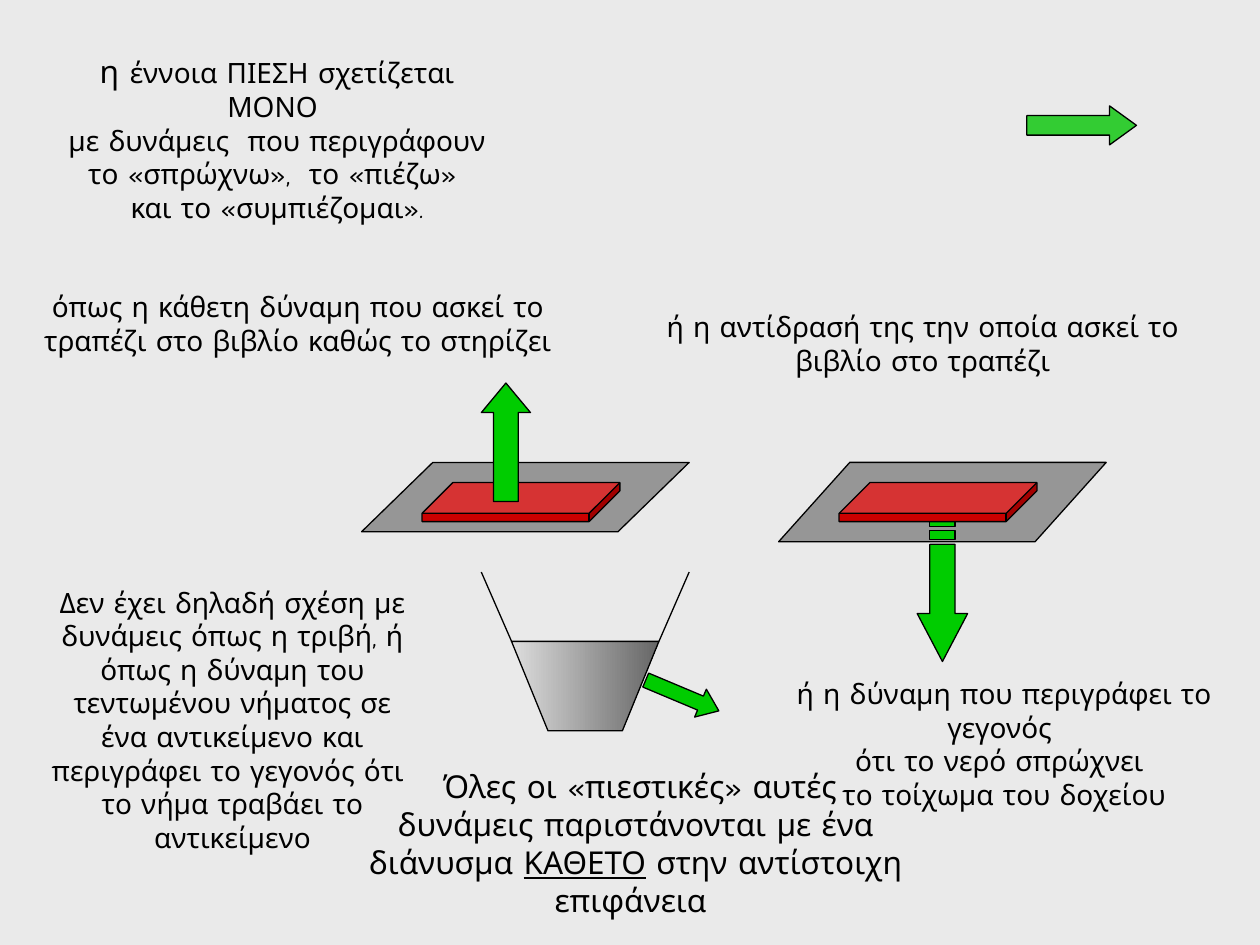
from lxml.etree import SubElement
from pptx import Presentation
from pptx.dml.color import RGBColor
from pptx.enum.shapes import MSO_CONNECTOR, MSO_SHAPE
from pptx.enum.text import MSO_ANCHOR, PP_ALIGN
from pptx.oxml.ns import qn
from pptx.util import Pt

PX = 9144
COLORS = {
    "background": "EAEAEA", "ink": "000000", "table": "969696", "book": "CC0000",
    "force": "00CC00", "lead": "33CC33", "water_light": "DDDDDD", "water_dark": "666666",
}
BODY = {"name": "Comic Neue", "size": Pt(16)}
LARGE = {"name": "Comic Neue", "size": Pt(18)}
ARIAL = {"name": "Arial", "size": Pt(18)}
UNDERLINED = {**LARGE, "underline": True}


def rgb(name):
    return RGBColor.from_string(COLORS[name])


def px(*values):
    return [v * PX for v in values]


def outline(sp):
    sp.line.color.rgb = rgb("ink")
    sp.line.width = Pt(0.75)


def paint(sp, color):
    sp.shadow.inherit = False
    sp.fill.solid()
    sp.fill.fore_color.rgb = rgb(color)
    outline(sp)


def add_preset(slide, kind, box, color, adjustments, rotation=0):
    sp = slide.shapes.add_shape(kind, *px(*box))
    for i, value in enumerate(adjustments):
        sp.adjustments[i] = value
    sp.rotation = rotation
    paint(sp, color)


def add_outline(slide, origin, contours, color):
    x, y = origin
    moved = [[(x + dx, y + dy) for dx, dy in points] for points in contours]
    builder = slide.shapes.build_freeform(*moved[0][0], scale=PX)
    builder.add_line_segments(moved[0][1:], close=True)
    for points in moved[1:]:
        builder.move_to(*points[0])
        builder.add_line_segments(points[1:], close=True)
    sp = builder.convert_to_shape()
    paint(sp, color)
    return sp


def add_line(slide, x1, y1, x2, y2):
    line = slide.shapes.add_connector(MSO_CONNECTOR.STRAIGHT, *px(x1, y1, x2, y2))
    SubElement(line._element.spPr, qn("a:effectLst"))
    outline(line)


def add_text(slide, box, paragraphs, anchor=MSO_ANCHOR.TOP):
    tf = slide.shapes.add_textbox(*px(*box)).text_frame
    tf.word_wrap = True
    tf.vertical_anchor = anchor
    for i, runs in enumerate(paragraphs):
        p = tf.add_paragraph() if i else tf.paragraphs[0]
        p.alignment = PP_ALIGN.CENTER
        for text, style in runs:
            r = p.add_run()
            r.text = text
            for key, value in style.items():
                setattr(r.font, key, value)
            r.font.color.rgb = rgb("ink")


def add_table_top(slide, box):
    skew = 0.565 * 100 / box[3]
    add_preset(slide, MSO_SHAPE.PARALLELOGRAM, box, "table", [skew])


def add_book(slide, box):
    x, y = box[:2]
    add_preset(slide, MSO_SHAPE.CUBE, (x + 48, y + 16, 157, 31), "book", [0.789])


def draw_support(slide, box):
    x, y = box[:2]
    add_table_top(slide, box)
    add_book(slide, box)
    add_preset(slide, MSO_SHAPE.UP_ARROW, (x + 95, y - 63, 39, 94), "force", [0.5, 0.602])


def draw_reaction(slide, box):
    add_table_top(slide, box)
    arrow = [(150, 120), (140, 120), (140, 65), (120, 65), (120, 120), (110, 120), (130, 158)]
    dashes = [[(140, top), (120, top), (120, bottom), (140, bottom)]
              for top, bottom in ((54, 61), (47, 51))]
    add_outline(slide, box[:2], [arrow, *dashes], "force")
    add_book(slide, box)


def draw_vessel(slide, box):
    x, y, w, h = box
    level = 55
    water = [(24, level), (53, h), (112, h), (w - 24, level)]
    sp = add_outline(slide, (x, y), [water], "water_light")
    sp.fill.gradient()
    sp.fill.gradient_angle = 0
    for stop, position, color in zip(sp.fill.gradient_stops, (0, 1), ("water_light", "water_dark")):
        stop.position = position
        stop.color.rgb = rgb(color)
    add_line(slide, x + 24, y + level, x, y)
    add_line(slide, x + w - 24, y + level, x + w, y)
    add_preset(slide, MSO_SHAPE.RIGHT_ARROW, (x + 128, y + 86, 63, 24), "force", [0.5, 0.658], 22.8)


def draw_intro(slide, box):
    add_text(slide, box, [
        [("η ", LARGE), ("έννοια ΠΙΕΣΗ σχετίζεται ΜΟΝΟ ", BODY)],
        [("με δυνάμεις  που περιγράφουν ", BODY)],
        [("το «σπρώχνω»,  το «πιέζω» ", BODY)],
        [("και το «συμπιέζομαι».", BODY)],
    ], MSO_ANCHOR.MIDDLE)


def draw_exclusion(slide, box):
    add_text(slide, box, [
        [("Δεν έχει δηλαδή σχέση με δυνάμεις όπως η τριβή, ή όπως η δύναμη του τεντωμένου "
          "νήματος σε ένα αντικείμενο και περιγράφει το γεγονός ότι ", BODY)],
        [("το νήμα τραβάει το αντικείμενο", BODY)],
    ], MSO_ANCHOR.MIDDLE)


def draw_conclusion(slide, box):
    add_text(slide, box, [[
        (" ", ARIAL),
        ("Όλες οι «πιεστικές» αυτές δυνάμεις παριστάνονται με ένα διάνυσμα ", LARGE),
        ("ΚΑΘΕΤΟ", UNDERLINED),
        (" στην αντίστοιχη επιφάνεια ", LARGE),
    ]], MSO_ANCHOR.MIDDLE)


def draw_caption(slide, box, *lines):
    add_text(slide, box, [[(line, BODY)] for line in lines])


def main():
    prs = Presentation()
    prs.slide_width, prs.slide_height = px(1000, 750)
    slide = prs.slides.add_slide(prs.slide_layouts[6])
    slide.background.fill.solid()
    slide.background.fill.fore_color.rgb = rgb("background")

    draw_reaction(slide, (618, 367, 260, 63))
    draw_intro(slide, (43, 36, 354, 147))
    draw_exclusion(slide, (27, 459, 315, 224))
    draw_conclusion(slide, (280, 619, 449, 100))
    draw_caption(slide, (20, 225, 433, 64),
                 "όπως η κάθετη δύναμη που ασκεί το τραπέζι στο βιβλίο καθώς το στηρίζει")
    draw_support(slide, (287, 367, 260, 55))
    draw_caption(slide, (516, 241, 433, 64),
                 "ή η αντίδρασή της την οποία ασκεί το βιβλίο στο τραπέζι")
    draw_vessel(slide, (382, 454, 165, 126))
    draw_caption(slide, (594, 532, 406, 90),
                 "ή η δύναμη που περιγράφει το γεγονός ", "ότι το νερό σπρώχνει ",
                 "το τοίχωμα του δοχείου")
    add_preset(slide, MSO_SHAPE.RIGHT_ARROW, (815, 84, 87, 31), "lead", [0.5, 0.689])
    prs.save("out.pptx")


if __name__ == "__main__":
    main()
